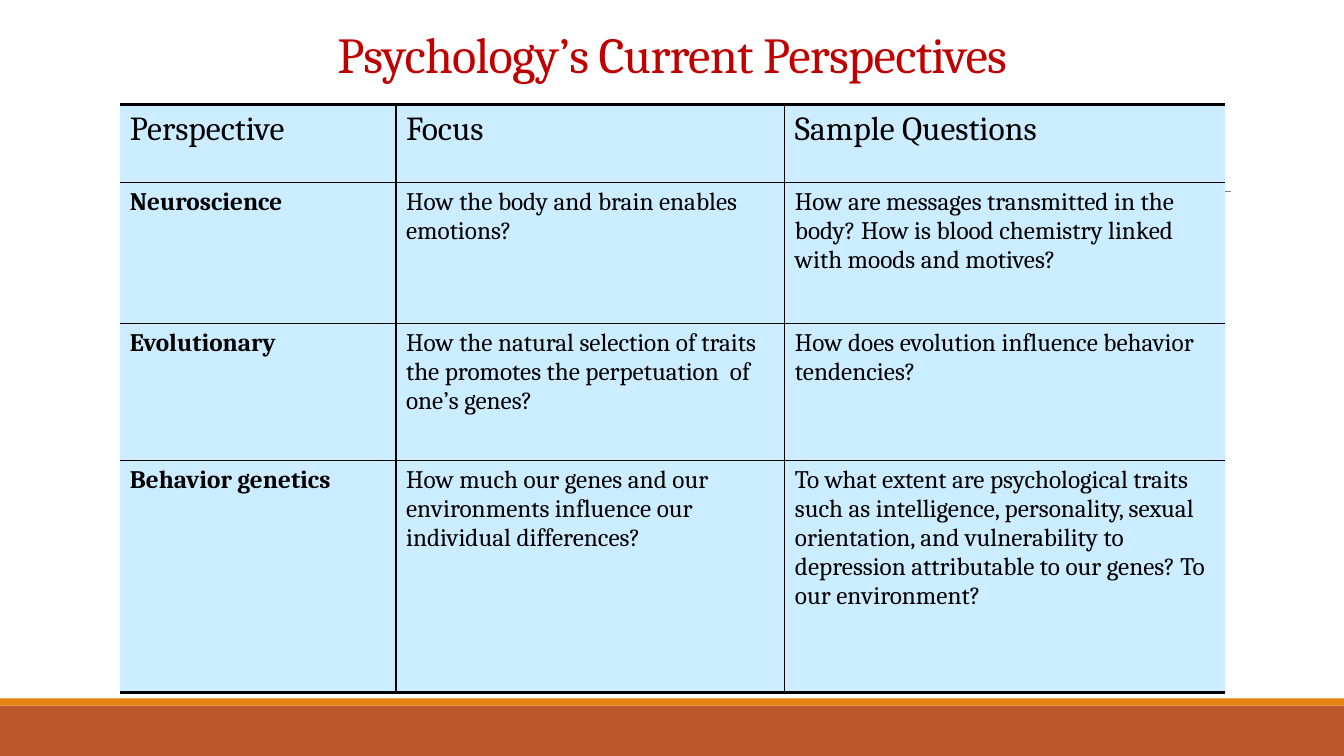
"""Build the slide on psychology's current perspectives."""
from dataclasses import dataclass

from lxml import etree
from pptx import Presentation
from pptx import util as u
from pptx.dml.color import RGBColor
from pptx.enum import shapes, text
from pptx.oxml import ns

BLACK = RGBColor(0x00, 0x00, 0x00)
RED = RGBColor(0xC0, 0x00, 0x00)
SKY = RGBColor(0xCC, 0xEC, 0xFF)
RUST = RGBColor(0xBD, 0x58, 0x2C)
ORANGE = RGBColor(0xE4, 0x83, 0x12)
GREY = RGBColor(0x80, 0x80, 0x80)
FONT = "Cambria"
PAGE_WIDTH, PAGE_HEIGHT = u.Cm(33.87), u.Cm(19.05)
COLUMN_WIDTHS = (6.96, 9.8, 11.1)
THIN, THICK = 1, 2.25


@dataclass(frozen=True)
class Band:
    top: float
    height: float
    color: RGBColor


@dataclass(frozen=True)
class Perspective:
    height: float
    name: str
    focus: str
    questions: str


FOOTER_BANDS = (Band(17.78, 1.27, RUST), Band(17.6, 0.18, ORANGE))
PERSPECTIVES = (
    Perspective(1.96, "Perspective", "Focus", "Sample Questions"),
    Perspective(
        3.56, "Neuroscience", "How the body and brain enables emotions?",
        "How are messages transmitted in the body? How is blood chemistry "
        "linked with moods and motives?"),
    Perspective(
        3.45, "Evolutionary",
        "How the natural selection of traits the promotes the perpetuation  of one’s genes?",
        "How does evolution influence behavior tendencies?"),
    Perspective(
        5.84, "Behavior genetics",
        "How much our genes and our environments influence our individual differences?",
        "To what extent are psychological traits such as intelligence, personality, "
        "sexual orientation, and vulnerability to depression attributable to our genes? "
        "To our environment?"),
)


def apply(target, formats: dict) -> None:
    """Set every listed attribute on the target."""
    for name, value in formats.items():
        setattr(target, name, value)


def style_font(font, size: float, color: RGBColor, bold: bool = False) -> None:
    """Give a font its face, size, weight and colour."""
    apply(font, {"name": FONT, "size": u.Pt(size), "bold": bold})
    font.color.rgb = color


def add_band(slide, band: Band) -> None:
    """Draw one full-width footer band."""
    stripe = slide.shapes.add_shape(
        shapes.MSO_SHAPE.RECTANGLE, 0, u.Cm(band.top), PAGE_WIDTH, u.Cm(band.height))
    stripe.shadow.inherit = False
    stripe.fill.solid()
    stripe.fill.fore_color.rgb = band.color
    stripe.line.fill.background()


def add_rule(slide) -> None:
    """Draw the thin grey rule that runs behind the table."""
    rule = slide.shapes.add_connector(
        shapes.MSO_CONNECTOR.STRAIGHT, u.Cm(3.33), u.Cm(4.83), u.Cm(31.01), u.Cm(4.83))
    rule.line.color.rgb = GREY
    rule.line.width = u.Pt(0.5)
    etree.SubElement(rule.element.spPr, ns.qn("a:effectLst"))


def add_title(slide) -> None:
    """Place and format the title."""
    title = slide.shapes.title
    apply(title, {"left": u.Cm(1.7), "top": u.Cm(0.76),
                  "width": u.Cm(30.48), "height": u.Cm(1.47)})
    title.text_frame.text = "Psychology’s Current Perspectives"
    apply(title.text_frame, {"vertical_anchor": text.MSO_ANCHOR.BOTTOM, "word_wrap": True,
                             "auto_size": text.MSO_AUTO_SIZE.NONE})
    heading = title.text_frame.paragraphs[0]
    apply(heading, {"alignment": text.PP_ALIGN.CENTER, "line_spacing": 0.85})
    style_font(heading.runs[0].font, 36, RED)
    heading.runs[0].font._element.set("spc", "-50")


def set_borders(cell, widths: dict[str, float]) -> None:
    """Draw the borders of a cell, leaving out those of zero width."""
    properties = cell._tc.get_or_add_tcPr()
    for side, width in widths.items():
        border = etree.SubElement(properties, ns.qn(f"a:ln{side}"), w=str(u.Pt(width)))
        if width:
            paint = etree.SubElement(border, ns.qn("a:solidFill"))
            etree.SubElement(paint, ns.qn("a:srgbClr"), val=str(BLACK))
        else:
            etree.SubElement(border, ns.qn("a:noFill"))


def add_perspectives(slide) -> None:
    """Build the table of perspectives."""
    table = slide.shapes.add_table(
        len(PERSPECTIVES), len(COLUMN_WIDTHS), u.Cm(3.02), u.Cm(2.64),
        u.Cm(sum(COLUMN_WIDTHS)), u.Cm(sum(p.height for p in PERSPECTIVES))).table
    apply(table, {"first_row": False, "horz_banding": False})
    for column, width in zip(table.columns, COLUMN_WIDTHS):
        column.width = u.Cm(width)
    last_row, last_column = len(PERSPECTIVES) - 1, len(COLUMN_WIDTHS) - 1
    for r, perspective in enumerate(PERSPECTIVES):
        table.rows[r].height = u.Cm(perspective.height)
        wording = (perspective.name, perspective.focus, perspective.questions)
        for c, words in enumerate(wording):
            cell = table.cell(r, c)
            cell.text = words
            style_font(cell.text_frame.paragraphs[0].runs[0].font,
                       24 if r == 0 else 18, BLACK, bold=r > 0 and c == 0)
            set_borders(cell, {"L": THIN if c > 0 else 0,
                               "R": THIN if c < last_column else 0,
                               "T": THIN if r > 0 else THICK,
                               "B": THIN if r < last_row else THICK})
            cell.fill.solid()
            cell.fill.fore_color.rgb = SKY


def main() -> None:
    """Assemble and save the slide."""
    deck = Presentation()
    apply(deck, {"slide_width": PAGE_WIDTH, "slide_height": PAGE_HEIGHT})
    slide = deck.slides.add_slide(deck.slide_layouts[5])
    for band in FOOTER_BANDS:
        add_band(slide, band)
    add_rule(slide)
    add_title(slide)
    add_perspectives(slide)
    deck.save("out.pptx")


if __name__ == "__main__":
    main()
